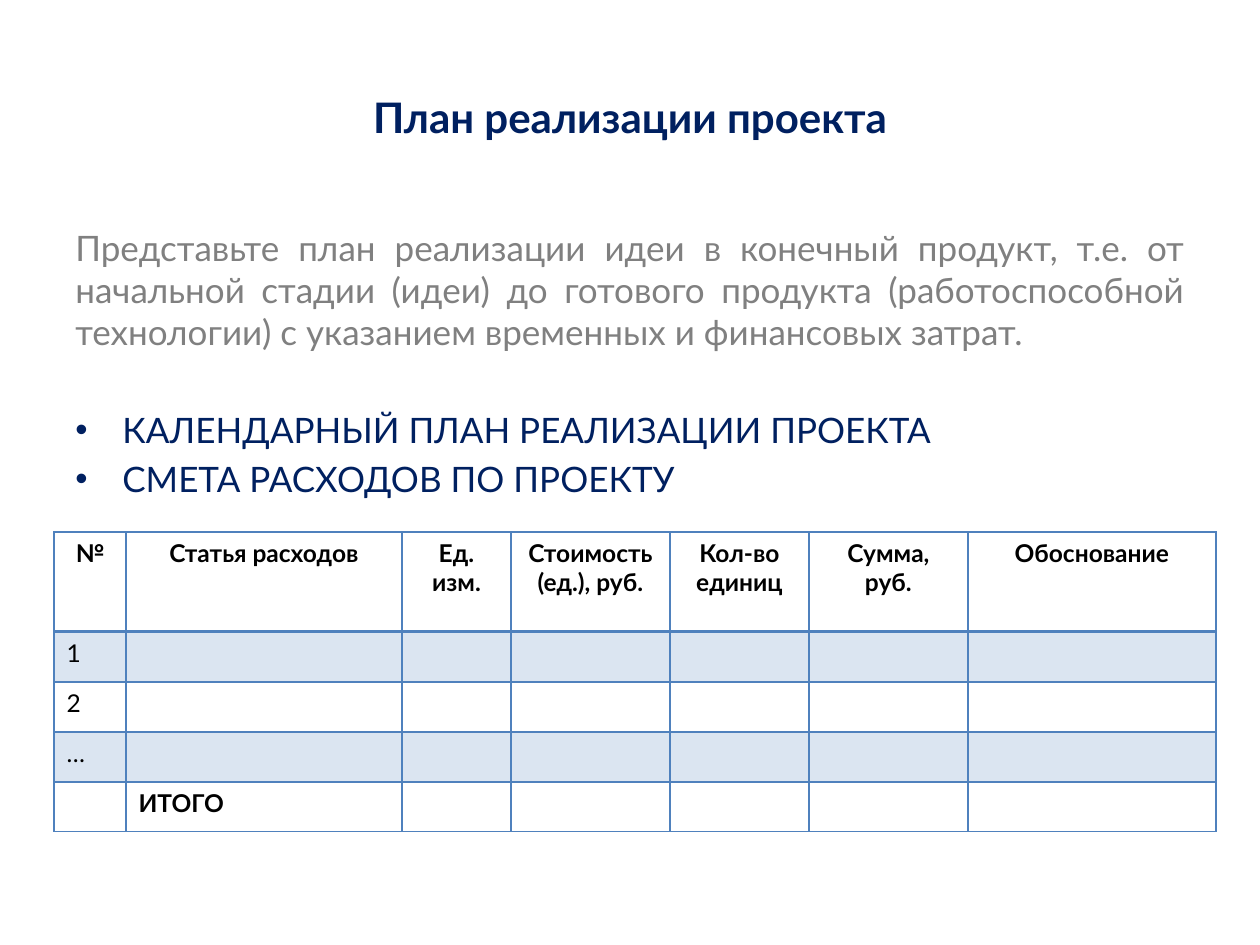
from dataclasses import dataclass

from lxml import etree
from pptx import Presentation
from pptx.dml.color import RGBColor
from pptx.enum import text
from pptx.oxml import ns
from pptx import util as u

NAVY = RGBColor(0x00, 0x20, 0x60)
GRAY = RGBColor(0x80, 0x80, 0x80)
BLACK = RGBColor(0x00, 0x00, 0x00)
BLUE = RGBColor(0x4F, 0x81, 0xBD)
FONT = "Lato"
PX_PER_INCH = 126
BAND_OPACITY = 20
BULLET_INDENT = 47
LEFT, CENTER, JUSTIFY = (
    text.PP_ALIGN.LEFT, text.PP_ALIGN.CENTER, text.PP_ALIGN.JUSTIFY)


@dataclass
class BodyLine:
    wording: str
    color: RGBColor
    space_before: int = 4
    bullet: bool = False


@dataclass
class TableRow:
    height: int
    wording: list[str]
    bold: bool = False
    align: int = LEFT
    banded: bool = False
    rule_below: int = 1


BODY = [
    BodyLine("Представьте план реализации идеи в конечный продукт, т.е. от "
             "начальной стадии (идеи) до готового продукта (работоспособной "
             "технологии) с указанием временных и финансовых затрат.", GRAY),
    BodyLine("КАЛЕНДАРНЫЙ ПЛАН РЕАЛИЗАЦИИ ПРОЕКТА", NAVY, 32, True),
    BodyLine("СМЕТА РАСХОДОВ ПО ПРОЕКТУ", NAVY, bullet=True),
]

COLUMN_WIDTHS = [72, 276, 109, 159, 139, 159, 248]
ROWS = [
    TableRow(100, ["№", "Статья расходов", "Ед. изм.", "Стоимость (ед.), руб.",
                   "Кол-во единиц", "Сумма, руб.", "Обоснование"],
             bold=True, align=CENTER, rule_below=2),
    TableRow(50, ["1"], banded=True),
    TableRow(50, ["2"]),
    TableRow(50, ["…"], banded=True),
    TableRow(50, ["", "ИТОГО"], bold=True),
]


def px(length: int) -> u.Emu:
    return u.Emu(round(length * 914400 / PX_PER_INCH))


def place(shape, left: int, top: int, width: int, height: int) -> None:
    shape.left, shape.top = px(left), px(top)
    shape.width, shape.height = px(width), px(height)


def format_text(para, size: int, color: RGBColor, align: int,
                bold: bool = False) -> None:
    para.alignment = align
    for span in para.runs:
        span.font.name = FONT
        span.font.size = u.Pt(size)
        span.font.bold = bold
        span.font.color.rgb = color


def add_bullet(para) -> None:
    props = para._p.get_or_add_pPr()
    props.set("marL", str(px(BULLET_INDENT)))
    props.set("indent", str(-px(BULLET_INDENT)))
    etree.SubElement(props, ns.qn("a:buFont"), typeface="Arial")
    etree.SubElement(props, ns.qn("a:buChar"), char="•")


def add_body(page) -> None:
    box = page.shapes.add_textbox(px(63), px(220), px(1134), px(300))
    frame = box.text_frame
    frame.word_wrap = True
    frame.text = "\n".join(line.wording for line in BODY)
    for para, line in zip(frame.paragraphs, BODY):
        format_text(para, 20, line.color, JUSTIFY)
        para.space_before = u.Pt(line.space_before)
        if line.bullet:
            add_bullet(para)


def set_border(cell, side: str, points: int) -> None:
    line = etree.SubElement(cell._tc.get_or_add_tcPr(), ns.qn(f"a:ln{side}"),
                            w=str(u.Pt(points)))
    fill = etree.SubElement(line, ns.qn("a:solidFill"))
    etree.SubElement(fill, ns.qn("a:srgbClr"), val=str(BLUE))


def fill_cell(cell, banded: bool) -> None:
    if not banded:
        cell.fill.background()
        return
    cell.fill.solid()
    cell.fill.fore_color.rgb = BLUE
    color = cell._tc.tcPr.find(".//" + ns.qn("a:solidFill") + "[last()]")
    color = cell._tc.tcPr.findall(ns.qn("a:solidFill"))[0][0]
    etree.SubElement(color, ns.qn("a:alpha"), val=str(BAND_OPACITY * 1000))


def add_cost_table(page) -> None:
    height = sum(row.height for row in ROWS)
    table = page.shapes.add_table(
        len(ROWS), len(COLUMN_WIDTHS), px(54), px(532),
        px(sum(COLUMN_WIDTHS)), px(height)).table
    table.first_row = table.horz_banding = False
    for column, width in zip(table.columns, COLUMN_WIDTHS):
        column.width = px(width)

    rule_above = 1
    for table_row, row in zip(table.rows, ROWS):
        table_row.height = px(row.height)
        for index, cell in enumerate(table_row.cells):
            cell.margin_bottom = 0
            if index < len(row.wording):
                cell.text_frame.text = row.wording[index]
                format_text(cell.text_frame.paragraphs[0], 14, BLACK,
                            row.align, row.bold)
            for side, points in (("L", 1), ("R", 1), ("T", rule_above),
                                 ("B", row.rule_below)):
                set_border(cell, side, points)
            fill_cell(cell, row.banded)
        rule_above = row.rule_below


def main() -> None:
    deck = Presentation()
    deck.slide_width, deck.slide_height = px(1260), px(945)
    page = deck.slides.add_slide(deck.slide_layouts.get_by_name("Title Only"))

    # Title
    title = page.shapes.title
    place(title, 63, 38, 1134, 158)
    title.text_frame.text = "План реализации проекта"
    title.text_frame.vertical_anchor = text.MSO_ANCHOR.MIDDLE
    format_text(title.text_frame.paragraphs[0], 24, NAVY, CENTER, bold=True)

    # Instructions and project cost table
    add_body(page)
    add_cost_table(page)
    deck.save("out.pptx")


if __name__ == "__main__":
    main()
